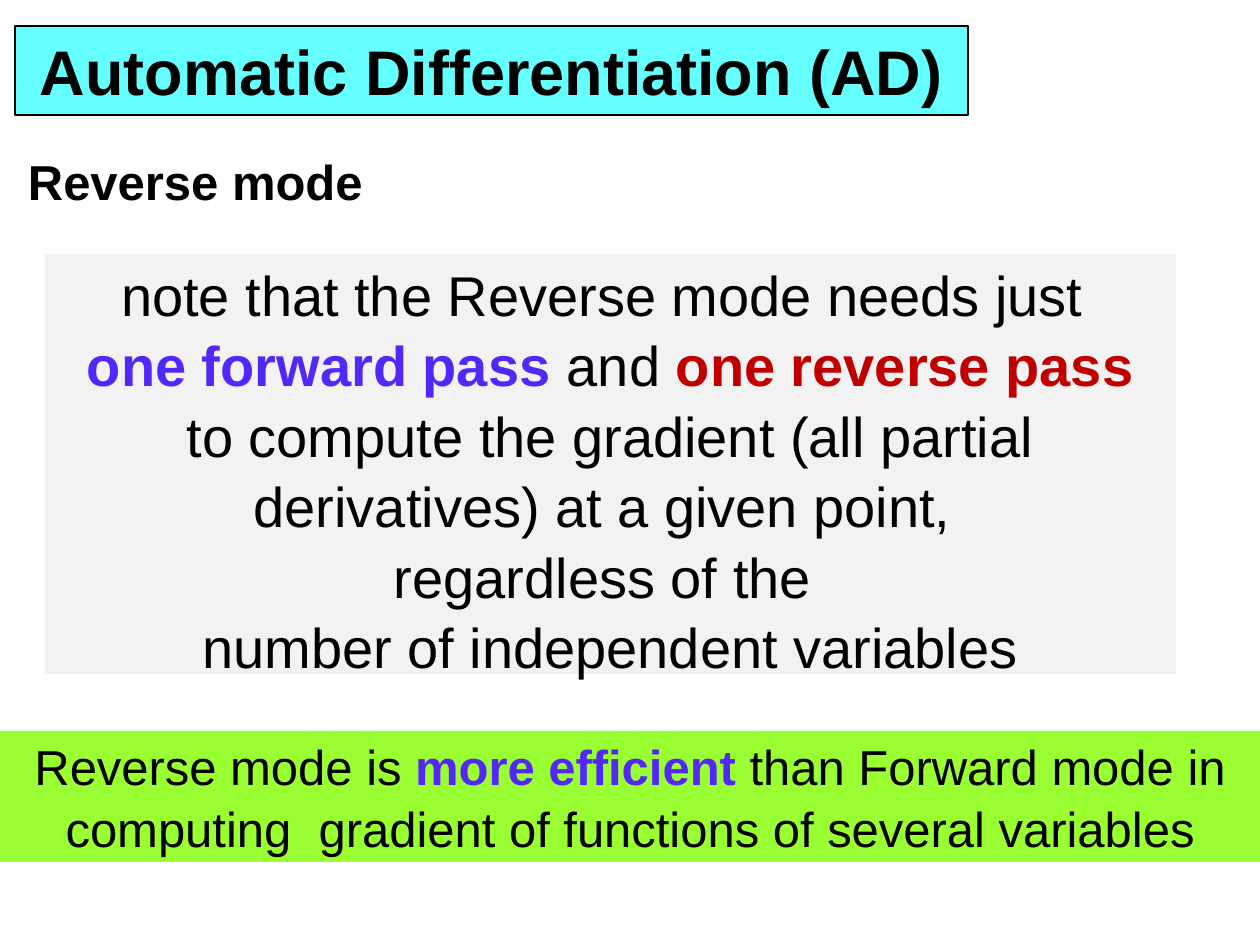
import pptx
import pptx.util
import pptx.dml.color
import pptx.enum.shapes
import pptx.enum.text

EMU_PER_PX = 914400 / 126
ALIGN = pptx.enum.text.PP_ALIGN
ANCHOR = pptx.enum.text.MSO_ANCHOR
BLACK, VIOLET, RED = "000000", "5427F9", "C00000"


def px(n):
    """Turn pixels into EMU."""
    return pptx.util.Emu(round(n * EMU_PER_PX))


def color(value):
    """Turn a hex string into a colour."""
    return pptx.dml.color.RGBColor.from_string(value)


def apply(obj, values):
    """Set each attribute of a dict of format values."""
    for name, value in values.items():
        setattr(obj, name, value)


def place(sp, box):
    """Put a shape into a box of left, top, width and height."""
    apply(sp, dict(zip(("left", "top", "width", "height"), map(px, box))))


def write(sp, paragraphs, size, align=ALIGN.CENTER, spacing=1.05, **frame):
    """Fill a shape with paragraphs of (text, colour, bold) runs."""
    tf = sp.text_frame
    apply(tf, {"word_wrap": True, "auto_size": pptx.enum.text.MSO_AUTO_SIZE.NONE,
               "margin_left": px(13), "margin_right": px(13),
               "margin_top": px(6), "margin_bottom": px(6), **frame})
    for i, runs in enumerate(paragraphs):
        p = tf.add_paragraph() if i else tf.paragraphs[0]
        apply(p, {"alignment": align, "line_spacing": spacing,
                  "space_before": pptx.util.Pt(0)})
        for text, hue, bold in runs:
            r = p.add_run()
            r.text = text
            apply(r.font, {"name": "Arial", "size": pptx.util.Pt(size), "bold": bold})
            r.font.color.rgb = color(hue)


def title_bar(s, box, text):
    """Format the title placeholder as a framed bar."""
    sp = s.shapes.title
    place(sp, box)
    sp.fill.solid()
    sp.fill.fore_color.rgb = color("66FFFF")
    sp.line.color.rgb = color(BLACK)
    sp.line.width = pptx.util.Pt(0.75)
    write(sp, [[(text, BLACK, True)]], 36, spacing=1.0, vertical_anchor=ANCHOR.MIDDLE)


def subtitle(s, box, text):
    """Add the bold heading under the title."""
    sp = s.shapes.add_textbox(*map(px, box))
    write(sp, [[(text, BLACK, True)]], 28, ALIGN.LEFT, 1.0, word_wrap=False,
          vertical_anchor=ANCHOR.MIDDLE, margin_top=px(1))


def panel(s, box, fill, paragraphs, size):
    """Add a filled panel of centred text."""
    sp = s.shapes.add_shape(pptx.enum.shapes.MSO_SHAPE.RECTANGLE, *map(px, box))
    sp.shadow.inherit = False
    sp.fill.solid()
    sp.fill.fore_color.rgb = color(fill)
    sp.line.fill.background()
    write(sp, paragraphs, size, vertical_anchor=ANCHOR.TOP, margin_top=px(3))


def main():
    """Build the slide and save it."""
    prs = pptx.Presentation()
    prs.slide_width, prs.slide_height = px(1260), px(945)
    s = prs.slides.add_slide(prs.slide_layouts[5])
    title_bar(s, (15, 26, 953, 89), "Automatic Differentiation (AD)")
    subtitle(s, (15, 150, 375, 67), "Reverse mode")
    panel(s, (45, 254, 1131, 420), "F2F2F2", [
        [("note that the Reverse mode needs just ", BLACK, False)],
        [("one forward pass ", VIOLET, True), ("and ", BLACK, False),
         ("one reverse pass ", RED, True),
         ("to compute the gradient (all partial derivatives) at a given point, ",
          BLACK, False)],
        [("regardless of the ", BLACK, False)],
        [("number of independent variables", BLACK, False)],
    ], 32)
    panel(s, (0, 731, 1260, 131), "99FF33", [
        [("Reverse mode is ", BLACK, False), ("more efficient ", VIOLET, True),
         ("than Forward mode in computing  gradient of functions of several variables",
          BLACK, False)],
    ], 28)
    prs.save("out.pptx")


if __name__ == "__main__":
    main()
